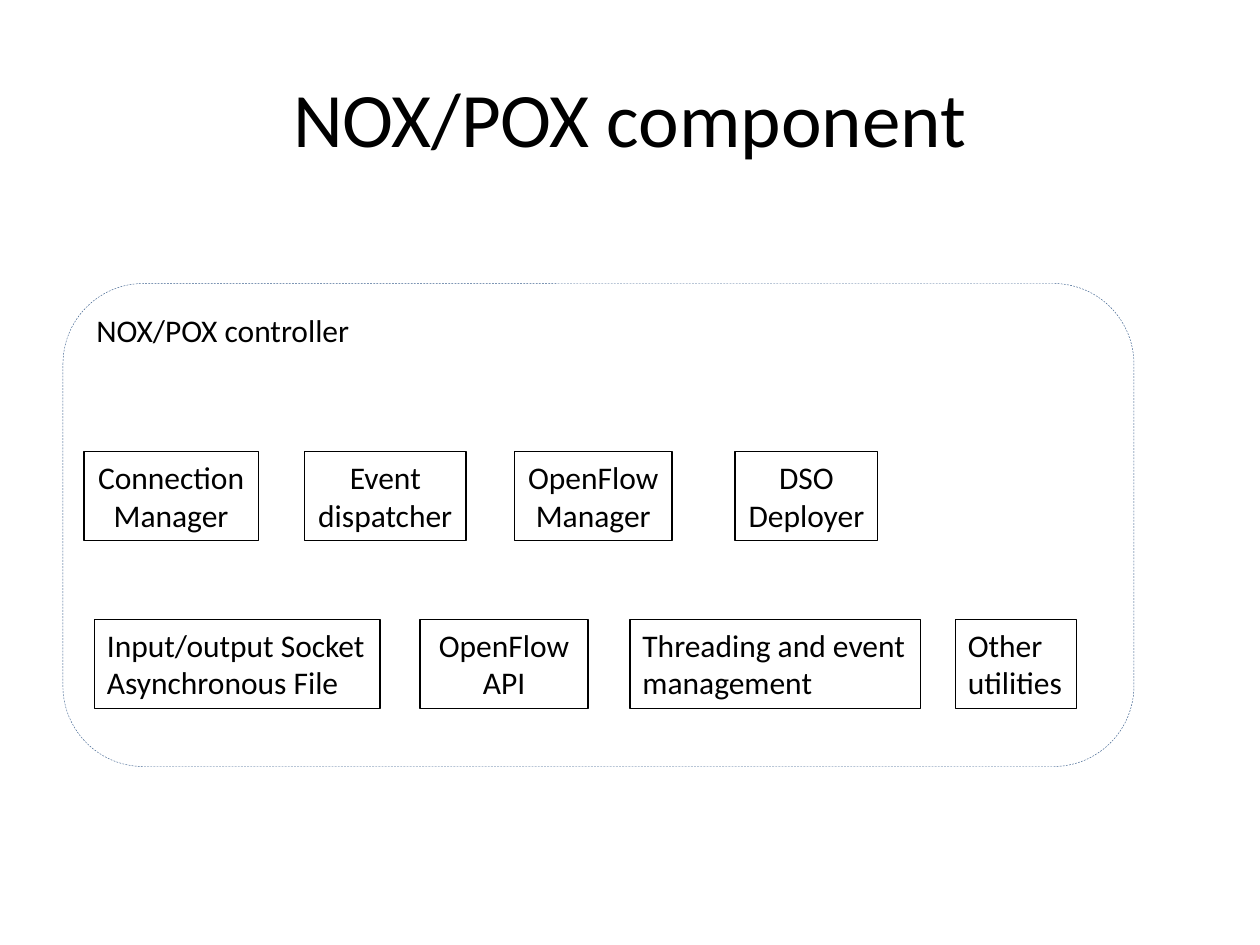
from pptx import Presentation
from pptx import util as u
from pptx.dml.color import RGBColor
from pptx.enum import dml, shapes, text

COLOURS = {"ink": "000000", "frame": "3A5F8C"}
CELL = u.Inches(1) // 12  # the slide is a grid of 120 columns by 90 rows
LEFT, CENTER = text.PP_ALIGN.LEFT, text.PP_ALIGN.CENTER


def write(box, lines, size=18, align=LEFT, anchor=text.MSO_ANCHOR.TOP, wrap=False):
    frame = box.text_frame
    frame.word_wrap = wrap
    frame.vertical_anchor = anchor
    frame.text = "\n".join(lines)
    for para in frame.paragraphs:
        para.alignment = align
        para.font.size = u.Pt(size)
        para.font.name = "Calibri"
        para.font.color.rgb = RGBColor.from_string(COLOURS["ink"])


def outline(kind, column, row, columns, rows, colour, width):
    """Add an unfilled shape, measured in grid cells."""
    box = page.shapes.add_shape(
        kind, *(round(n * CELL) for n in (column, row, columns, rows)))
    box.shadow.inherit = False
    box.fill.background()
    box.line.color.rgb = RGBColor.from_string(COLOURS[colour])
    box.line.width = u.Pt(width)
    return box


deck = Presentation()
deck.slide_width, deck.slide_height = 120 * CELL, 90 * CELL
page = deck.slides.add_slide(deck.slide_layouts[6])

title = page.shapes.add_textbox(6 * CELL, round(3.6 * CELL), 108 * CELL, 15 * CELL)
write(title, ["NOX/POX component"], size=44, align=CENTER,
      anchor=text.MSO_ANCHOR.MIDDLE, wrap=True)

caption = page.shapes.add_textbox(8 * CELL, 29 * CELL, round(26.8 * CELL), round(4.8 * CELL))
write(caption, ["NOX/POX controller"])

# Each component: first column, width in columns, alignment, lines
component_rows = {
    43: [
        (8, 16.6, CENTER, ["Connection", "Manager"]),
        (29, 15.4, CENTER, ["Event", "dispatcher"]),
        (49, 15, CENTER, ["OpenFlow", "Manager"]),
        (70, 13.6, CENTER, ["DSO", "Deployer"]),
    ],
    59: [
        (9, 27.2, LEFT, ["Input/output Socket", "Asynchronous File"]),
        (40, 16, CENTER, ["OpenFlow", "API"]),
        (60, 27.7, LEFT, ["Threading and event", "management"]),
        (91, 11.5, LEFT, ["Other", "utilities"]),
    ],
}
for row, components in component_rows.items():
    for column, columns, align, lines in components:
        component = outline(shapes.MSO_SHAPE.RECTANGLE, column, row, columns, 8.5, "ink", 0.75)
        write(component, lines, align=align)

controller = outline(shapes.MSO_SHAPE.ROUNDED_RECTANGLE, 6, 27, 102, 46, "frame", 0.25)
controller.line.dash_style = dml.MSO_LINE.DASH

deck.save("out.pptx")
